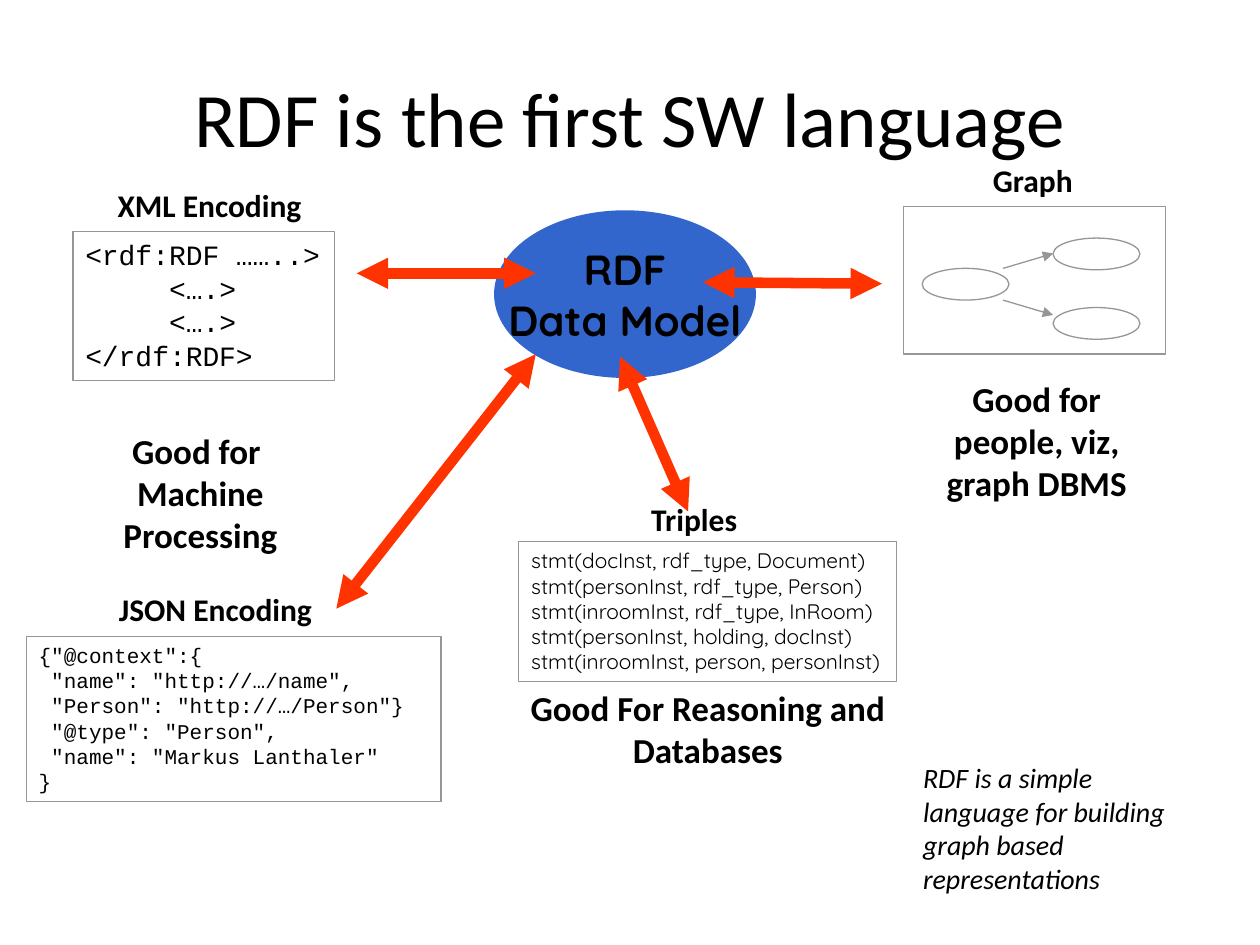
import pptx
import pptx.util
import pptx.dml.color
import pptx.enum.shapes
import pptx.enum.text
import pptx.oxml.ns
import lxml.etree

Cm = pptx.util.Cm
Pt = pptx.util.Pt
RGB = pptx.dml.color.RGBColor
Kind = pptx.enum.shapes.MSO_SHAPE
Fit = pptx.enum.text.MSO_AUTO_SIZE
Side = pptx.enum.text.PP_ALIGN
Hold = pptx.enum.text.MSO_ANCHOR

BLACK = RGB(0x00, 0x00, 0x00)
GREY = RGB(0x96, 0x96, 0x96)
BLUE = RGB(0x33, 0x66, 0xCC)
RED = RGB(0xFF, 0x33, 0x00)

SANS = "Calibri"
MONO = "Courier New"
ROUND = "Quicksand"


class Deck:
    def __init__(self):
        self.file = pptx.Presentation()
        self.file.slide_width = Cm(25.4)
        self.file.slide_height = Cm(19.05)
        self.slide = self.file.slides.add_slide(self.file.slide_layouts[5])
        self.home = self.slide.shapes

    def fill_text(self, frame, paras, size, font, side, bold=None, slant=None):
        for i, text in enumerate(paras):
            para = frame.paragraphs[0] if i == 0 else frame.add_paragraph()
            para.alignment = side
            for j, part in enumerate(text.split("\n")):
                if j:
                    para.add_line_break()
                run = para.add_run()
                run.text = part
                run.font.size = Pt(size)
                run.font.name = font
                run.font.bold = bold
                run.font.italic = slant
                run.font.color.rgb = BLACK

    def title(self, text, box):
        head = self.slide.shapes.title
        head.left, head.top, head.width, head.height = map(Cm, box)
        head.text_frame.vertical_anchor = Hold.MIDDLE
        self.fill_text(head.text_frame, [text], 44, SANS, Side.CENTER)

    def note(self, paras, box, size=20, wrap=False, side=Side.CENTER, bold=True, slant=None):
        frame = self.home.add_textbox(*map(Cm, box)).text_frame
        frame.word_wrap = wrap
        frame.auto_size = Fit.SHAPE_TO_FIT_TEXT
        self.fill_text(frame, paras, size, SANS, side, bold, slant)

    def label(self, text, box):
        self.note([text], box, size=18)

    def shape(self, kind, box, fill=None):
        item = self.home.add_shape(kind, *map(Cm, box))
        item.shadow.inherit = False
        if fill is None:
            item.fill.background()
            item.line.color.rgb = GREY
            item.line.width = Pt(0.75)
        else:
            item.fill.solid()
            item.fill.fore_color.rgb = fill
            item.line.fill.background()
        return item

    def code(self, rows, box, size, font, inset=()):
        frame = self.shape(Kind.RECTANGLE, box).text_frame
        frame.word_wrap = True
        frame.auto_size = Fit.SHAPE_TO_FIT_TEXT
        frame.vertical_anchor = Hold.TOP
        self.fill_text(frame, rows, size, font, Side.LEFT)
        for i in inset:
            props = frame.paragraphs[i]._p.get_or_add_pPr()
            props.set("marL", str(Cm(1.69)))
            props.set("indent", "0")

    def core(self, rows, box):
        frame = self.shape(Kind.OVAL, box, BLUE).text_frame
        frame.word_wrap = False
        frame.vertical_anchor = Hold.MIDDLE
        self.fill_text(frame, rows, 24, ROUND, Side.CENTER, True)

    def arrow(self, ends, color=RED, width=6, tips=("headEnd", "tailEnd")):
        link = self.home.add_connector(pptx.enum.shapes.MSO_CONNECTOR.STRAIGHT, *map(Cm, ends))
        link.line.color.rgb = color
        link.line.width = Pt(width)
        name = pptx.oxml.ns.qn
        props = link._element.spPr
        for tip in tips:
            lxml.etree.SubElement(props.find(name("a:ln")), name("a:" + tip), type="triangle")
        lxml.etree.SubElement(props, name("a:effectLst"))

    def graph(self, box):
        self.home = self.slide.shapes.add_group_shape().shapes
        for left, top in ((18.59, 5.41), (21.23, 4.8), (21.23, 6.2)):
            self.shape(Kind.OVAL, (left, top, 1.75, 0.64))
        for start, end in ((5.41, 5.11), (6.05, 6.35)):
            self.arrow((20.22, start, 21.23, end), GREY, 0.75, ("tailEnd",))
        self.shape(Kind.RECTANGLE, box)
        self.home = self.slide.shapes


def main():
    deck = Deck()
    deck.title("RDF is the first SW language", (1.27, 0.76, 22.86, 3.18))

    deck.code(["<rdf:RDF ……..>", "<….>", "<….>", "</rdf:RDF>"],
              (1.47, 4.67, 5.28, 3), 16, MONO, inset=(1, 2))
    deck.label("XML Encoding", (2.08, 3.63, 4.29, 1.02))

    deck.graph((18.21, 4.17, 5.28, 2.97))
    deck.label("Graph", (19.74, 3.12, 2.16, 1.02))

    facts = ("docInst, rdf_type, Document", "personInst, rdf_type, Person",
             "inroomInst, rdf_type, InRoom", "personInst, holding, docInst",
             "inroomInst, person, personInst")
    deck.code([f"stmt({fact})" for fact in facts], (10.46, 10.92, 7.62, 2.82), 12, ROUND)
    deck.label("Triples", (12.85, 9.96, 2.29, 1.02))

    deck.core(["RDF", "Data Model"], (9.96, 4.24, 5.28, 3.38))

    deck.note(["Good for ", "Machine\nProcessing"], (2.21, 8.53, 3.66, 2.82))
    deck.note(["Good for people, viz, graph DBMS"], (18.31, 7.49, 5.18, 2.82), wrap=True)
    deck.note(["Good For Reasoning and\nDatabases"], (10.41, 13.72, 7.72, 1.96))
    deck.note(["RDF is a simple language for building graph based representations"],
              (18.36, 15.21, 6.15, 2.97), size=16, wrap=True, side=Side.LEFT,
              bold=None, slant=True)

    deck.code(['{"@context":{', ' "name": "http://…/name",', ' "Person": "http://…/Person"}',
               ' "@type": "Person",', ' "name": "Markus Lanthaler"', '}'],
              (0.53, 12.83, 8.36, 3.33), 12, MONO)
    deck.label("JSON Encoding", (2.11, 11.76, 4.47, 1.02))

    for ends in ((7.19, 5.51, 10.8, 5.51), (14.17, 5.69, 17.78, 5.72),
                 (12.5, 7.19, 13.87, 10.31), (6.78, 12.27, 10.8, 7.14)):
        deck.arrow(ends)

    deck.file.save("out.pptx")


if __name__ == "__main__":
    main()
